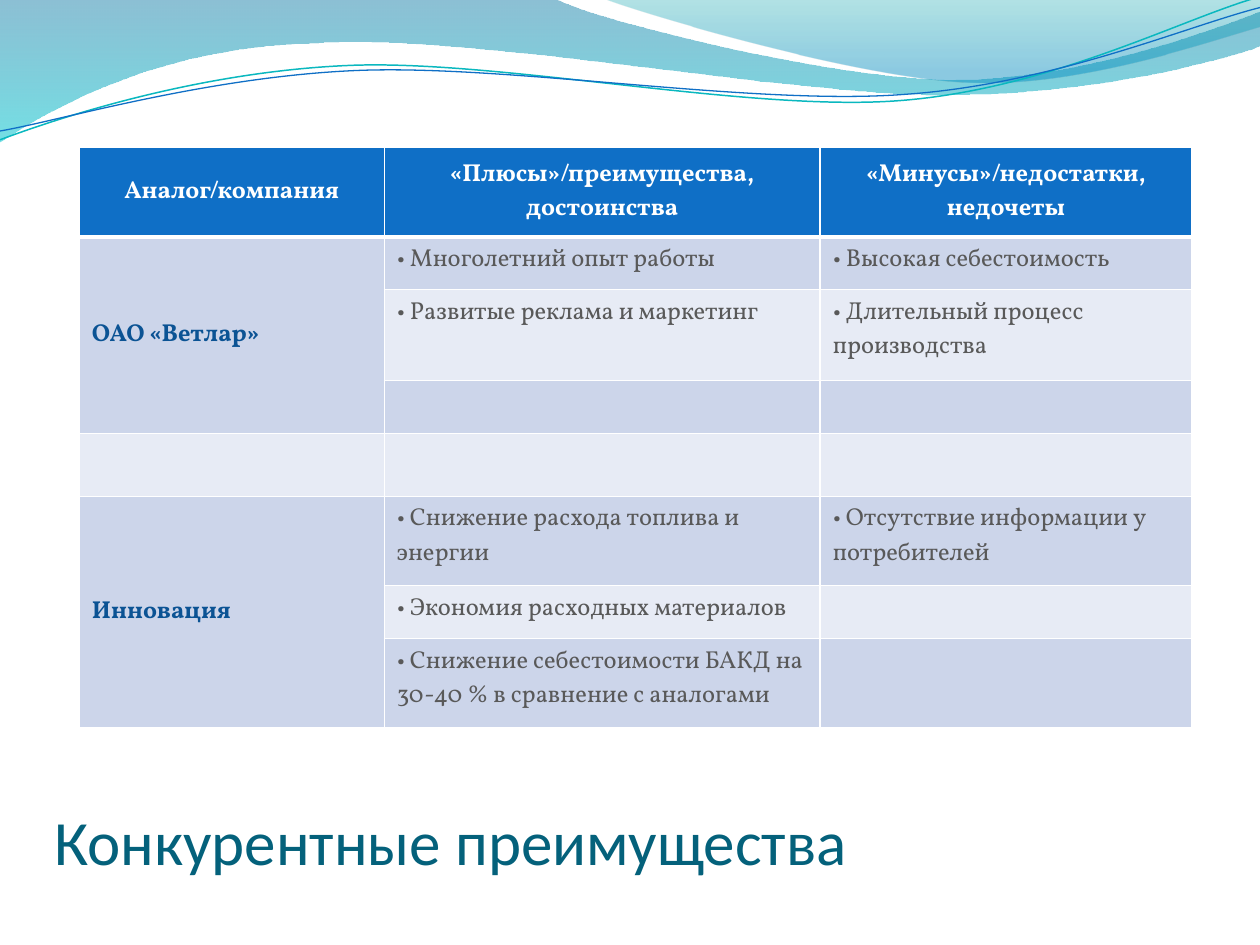
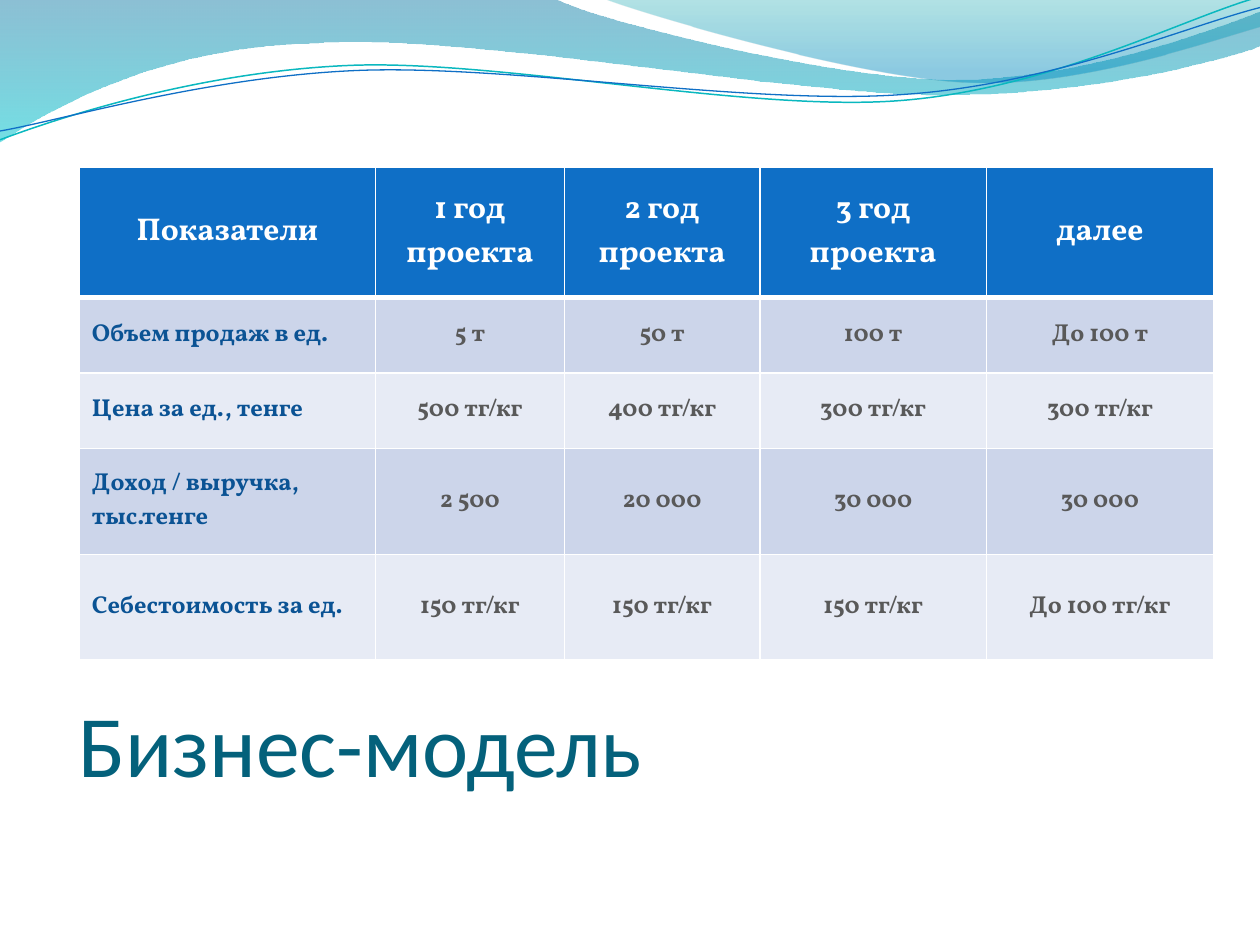
from lxml.etree import SubElement
from pptx import Presentation
from pptx.dml.color import RGBColor
from pptx.enum.text import MSO_ANCHOR, MSO_AUTO_SIZE, PP_ALIGN
from pptx.oxml.ns import qn
from pptx.util import Inches, Pt

WHITE = RGBColor(0xFF, 0xFF, 0xFF)
HEADER_BLUE = RGBColor(0x0F, 0x6F, 0xC6)
LABEL_BLUE = RGBColor(0x0B, 0x53, 0x94)
TITLE_TEAL = RGBColor(0x04, 0x61, 0x7B)
LINE_TEAL = RGBColor(0x0A, 0xB8, 0xBF)
TEXT_GREY = RGBColor(0x59, 0x59, 0x59)
BANDS = (RGBColor(0xCC, 0xD5, 0xEA), RGBColor(0xE7, 0xEB, 0xF5))
DEEP_BLUE = RGBColor(0x00, 0x74, 0xA1)
CYAN = RGBColor(0x00, 0xC6, 0xCF)
SEA_GREEN = RGBColor(0x00, 0xA1, 0xA9)
SKY_BLUE = RGBColor(0x00, 0x8B, 0xBF)

TITLE_FONT, TABLE_FONT = "Calibri", "Vollkorn"

# Wave outlines in inches: one point is a corner, three points are a Bezier curve
WIDE_WAVE = [
    [(0, 0)], [(4.4, -0.01)],
    [(4.76, 0.17), (6.64, 0.63), (7.58, 0.63)],
    [(8.53, 0.63), (9.58, 0.26), (10, 0.09)],
    [(10.01, 0.36)],
    [(9.83, 0.44), (8.7, 0.76), (7.46, 0.75)],
    [(6.22, 0.75), (3.82, 0.28), (2.57, 0.34)],
    [(1.29, 0.36), (0.46, 0.83), (-0.01, 1.13)],
    [(0, 0)],
]
RIGHT_WAVE = [
    [(4.79, -0.01)],
    [(5.09, 0.11), (6.82, 0.62), (7.69, 0.65)],
    [(8.56, 0.69), (9.61, 0.32), (10, 0.21)],
    [(10, 0)], [(4.79, -0.01)],
]
TEAL_LINE = [
    [(0, 1.11)],
    [(0.48, 0.93), (1.58, 0.57), (2.77, 0.52)],
    [(3.95, 0.47), (5.93, 0.89), (7.13, 0.8)],
    [(8.33, 0.71), (9.38, 0.15), (9.98, -0.02)],
]
BLUE_LINE = [
    [(0, 1.04)],
    [(0.47, 0.96), (1.64, 0.61), (2.83, 0.56)],
    [(4.03, 0.51), (5.97, 0.84), (7.17, 0.75)],
    [(8.36, 0.67), (9.41, 0.21), (10, 0.06)],
]


class Deck:
    def __init__(self):
        self.presentation = Presentation()
        self.presentation.slide_width = Inches(10)
        self.presentation.slide_height = Inches(7.5)
        self.layout = self.presentation.slide_layouts[5]
        self.slide = None

    def new_slide(self):
        self.slide = self.presentation.slides.add_slide(self.layout)

    def outline(self, parts, close):
        points = [(Inches(x), Inches(y)) for part in parts for x, y in part]
        builder = self.slide.shapes.build_freeform(*points[0], scale=1.0)
        builder.add_line_segments(points[1:], close=close)
        shape = builder.convert_to_shape()
        shape.shadow.inherit = False
        self.bend(shape, parts)
        return shape

    def bend(self, shape, parts):
        """Join each three segments of a curved part into one Bezier curve."""
        segments = iter(list(shape.element.iter(qn("a:lnTo"))))
        for part in parts[1:]:
            group = [next(segments) for _ in part]
            if len(group) == 3:
                outline = group[0].getparent()
                curve = SubElement(outline, qn("a:cubicBezTo"))
                group[0].addprevious(curve)
                for segment in group:
                    curve.append(segment[0])
                    outline.remove(segment)

    def wave(self, parts, stops):
        """Filled wave; stops are (position, colour, opacity in percent)."""
        shape = self.outline(parts, close=True)
        shape.line.fill.background()
        shape.fill.gradient()
        shape.fill.gradient_angle = 270
        for stop, (position, color, _) in zip(shape.fill.gradient_stops, stops):
            stop.position = position
            stop.color.rgb = color
        colors = shape.element.spPr.iter(qn("a:srgbClr"))
        for color, (_, _, opacity) in zip(list(colors), stops):
            SubElement(color, qn("a:alpha"), val=str(opacity * 1000))
        return shape

    def wave_line(self, parts, color, width):
        shape = self.outline(parts, close=False)
        shape.fill.background()
        shape.line.color.rgb = color
        shape.line.width = Pt(width)
        return shape

    def move_to_layout(self, shapes):
        """Put shapes behind everything on the shared layout."""
        for index, shape in enumerate(shapes, start=2):
            self.layout.shapes.element.insert(index, shape.element)

    def title(self, text, left, top, height, size):
        title = self.slide.shapes.title
        title.left, title.top = Inches(left), Inches(top)
        title.width, title.height = Inches(8.95), Inches(height)
        frame = title.text_frame
        frame.text = text
        frame.auto_size = MSO_AUTO_SIZE.NONE
        frame.vertical_anchor = MSO_ANCHOR.BOTTOM
        frame.margin_left = frame.margin_right = frame.margin_bottom = 0
        frame.margin_top = Inches(0.05)
        self.style(frame.paragraphs[0], TITLE_FONT, size, TITLE_TEAL, False, PP_ALIGN.LEFT)

    def style(self, paragraph, font_name, size, color, bold, align):
        paragraph.alignment = align
        font = paragraph.font
        font.name, font.size, font.bold = font_name, Pt(size), bold
        font.color.rgb = color

    def borders(self, cell, top, bottom):
        properties = cell._tc.get_or_add_tcPr()
        widths = {"a:lnL": 1, "a:lnR": 1, "a:lnT": top, "a:lnB": bottom}
        for index, (tag, width) in enumerate(widths.items()):
            line = SubElement(properties, qn(tag), w=str(Pt(width)))
            fill = SubElement(line, qn("a:solidFill"))
            SubElement(fill, qn("a:srgbClr"), val=str(WHITE))
            properties.insert(index, line)

    def bullet(self, paragraph):
        properties = paragraph._p.get_or_add_pPr()
        properties.set("marL", "0")
        properties.set("indent", "0")
        font = SubElement(properties, qn("a:buFont"), typeface=TABLE_FONT)
        mark = SubElement(properties, qn("a:buChar"), char="•")
        properties.insert(0, font)
        properties.insert(1, mark)

    def table(self, top, columns, heights, rows, header_size, bulleted=False, spans=()):
        frame = self.slide.shapes.add_table(
            len(rows), len(columns), Inches(0.63), Inches(top),
            Inches(sum(columns)), Inches(sum(heights)))
        table = frame.table
        for column, width in zip(table.columns, columns):
            column.width = Inches(width)
        for row, height in zip(table.rows, heights):
            row.height = Inches(height)
        for r, row in enumerate(rows):
            for c, text in enumerate(row):
                cell = table.cell(r, c)
                cell.fill.solid()
                cell.fill.fore_color.rgb = BANDS[(r - 1) % 2] if r else HEADER_BLUE
                self.borders(cell, top=3 if r == 1 else 1, bottom=1 if r else 3)
                if text:
                    self.cell_text(cell, text, r == 0, c == 0, header_size, bulleted)
        for first, last in spans:
            table.cell(first, 0).merge(table.cell(last, 0))

    def cell_text(self, cell, text, is_header, is_label, header_size, bulleted):
        listed = bulleted and not (is_header or is_label)
        cell.text = f" {text}" if listed else text
        cell.vertical_anchor = MSO_ANCHOR.TOP if listed else MSO_ANCHOR.MIDDLE
        paragraph = cell.text_frame.paragraphs[0]
        if is_header:
            size, color = header_size, WHITE
        else:
            size, color = 14, LABEL_BLUE if is_label else TEXT_GREY
        left = listed or (is_label and not is_header)
        self.style(paragraph, TABLE_FONT, size, color, not listed,
                   PP_ALIGN.LEFT if left else PP_ALIGN.CENTER)
        if listed:
            self.bullet(paragraph)


def main():
    deck = Deck()

    # Competitive advantages, with the waves shared through the layout
    deck.new_slide()
    deck.move_to_layout([
        deck.wave(WIDE_WAVE, [(0, DEEP_BLUE, 45), (1, CYAN, 55)]),
        deck.wave(RIGHT_WAVE, [(0, SEA_GREEN, 30), (0.8, SKY_BLUE, 45)]),
        deck.wave_line(TEAL_LINE, LINE_TEAL, 0.85),
        deck.wave_line(BLUE_LINE, HEADER_BLUE, 0.75),
    ])
    deck.title("Конкурентные преимущества", 0.43, 6.03, 0.94, 36)
    advantages = [
        ("Аналог/компания", "«Плюсы»/преимущества, достоинства", "«Минусы»/недостатки, недочеты"),
        ("ОАО «Ветлар»", "Многолетний опыт работы", "Высокая себестоимость"),
        ("", "Развитые реклама и маркетинг", "Длительный процесс производства"),
        ("", "", ""),
        ("", "", ""),
        ("Инновация", "Снижение расхода топлива и энергии", "Отсутствие информации у потребителей"),
        ("", "Экономия расходных материалов", ""),
        ("", "Снижение себестоимости БАКД на 30-40 % в сравнение с аналогами", ""),
    ]
    deck.table(1.17, [2.42, 3.46, 2.95], [0.71, 0.42, 0.72, 0.42, 0.5, 0.71, 0.42, 0.71],
               advantages, header_size=14, bulleted=True, spans=[(1, 3), (5, 7)])

    # Business model
    deck.new_slide()
    deck.title("Бизнес-модель", 0.62, 5.16, 1.15, 50)
    indicators = [
        ("Показатели", "1 год проекта", "2 год проекта", "3 год проекта", "далее"),
        ("Объем продаж в ед.", "5 т", "50 т", "100 т", "До 100 т"),
        ("Цена за ед., тенге", "500 тг/кг", "400 тг/кг", "300 тг/кг", "300 тг/кг"),
        ("Доход / выручка, тыс.тенге", "2 500", "20 000", "30 000", "30 000"),
        ("Себестоимость за ед.", "150 тг/кг", "150 тг/кг", "150 тг/кг", "До 100 тг/кг"),
    ]
    deck.table(1.33, [2.35, 1.5, 1.55, 1.8, 1.8], [1.03, 0.6, 0.6, 0.84, 0.84],
               indicators, header_size=18)

    deck.presentation.save("out.pptx")


if __name__ == "__main__":
    main()
